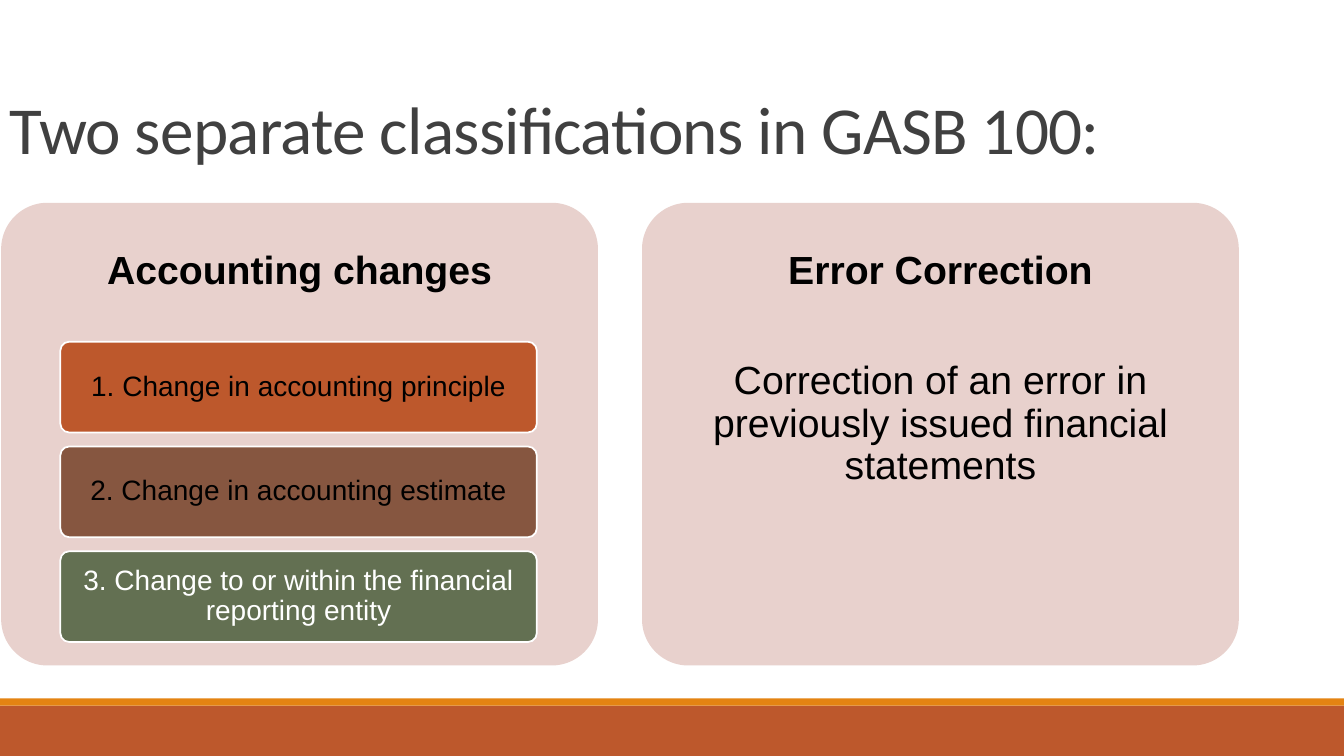
from pptx import Presentation
from pptx.dml.color import RGBColor
from pptx.enum.shapes import MSO_SHAPE
from pptx.enum.text import MSO_ANCHOR, PP_ALIGN
from pptx.util import Cm, Pt

WHITE = RGBColor(0xFF, 0xFF, 0xFF)
BLACK = RGBColor(0x00, 0x00, 0x00)
GRAY = RGBColor(0x40, 0x40, 0x40)
RUST = RGBColor(0xBD, 0x58, 0x2C)
ORANGE = RGBColor(0xE4, 0x83, 0x12)
BROWN = RGBColor(0x86, 0x56, 0x40)
GREEN = RGBColor(0x63, 0x70, 0x52)
PINK = RGBColor(0xE8, 0xD1, 0xCD)

# Text formats
TITLE = {"name": "Calibri", "size": Pt(48)}
HEAD = {"name": "Arial", "size": Pt(28), "bold": True}
BODY = {"name": "Arial", "size": Pt(28), "bold": False}
ITEM = {"name": "Arial", "size": Pt(20)}

# Panel and item grid, in cm
PANEL_X, PANEL_Y, PANEL_W, PANEL_H = 0.03, 5.11, 15.04, 11.66
PANEL_STEP = 16.15
HEAD_H = 3.5
ITEM_X, ITEM_Y, ITEM_W, ITEM_H = 1.52, 8.61, 12.01, 2.29
ITEM_STEP = 2.64

ITEMS = [
    ("1. Change in accounting principle", RUST, BLACK),
    ("2. Change in accounting estimate", BROWN, BLACK),
    ("3. Change to or within the financial reporting entity", GREEN, WHITE),
]


def write(shape, text, style, color, pad=0.3, align=PP_ALIGN.CENTER,
          anchor=MSO_ANCHOR.MIDDLE, lead=0.9):
    frame = shape.text_frame
    layout = {"word_wrap": True, "vertical_anchor": anchor,
              "margin_left": Cm(pad), "margin_right": Cm(pad),
              "margin_top": Cm(pad / 2), "margin_bottom": Cm(pad / 2)}
    for key, value in layout.items():
        setattr(frame, key, value)
    para = frame.paragraphs[0]
    para.alignment, para.line_spacing = align, lead
    run = para.add_run()
    run.text = text
    for key, value in style.items():
        setattr(run.font, key, value)
    run.font.color.rgb = color
    return run


def add_box(slide, kind, x, y, w, h, fill, line=None):
    box = slide.shapes.add_shape(kind, Cm(x), Cm(y), Cm(w), Cm(h))
    box.shadow.inherit = False
    box.fill.solid()
    box.fill.fore_color.rgb = fill
    if line is None:
        box.line.fill.background()
    else:
        box.line.color.rgb = line
        box.line.width = Pt(1.25)
    if kind == MSO_SHAPE.ROUNDED_RECTANGLE:
        box.adjustments[0] = 0.1
    return box


def add_text(slide, x, y, w, h, text, style, color, **opts):
    box = slide.shapes.add_textbox(Cm(x), Cm(y), Cm(w), Cm(h))
    return write(box, text, style, color, **opts)


def add_panel(slide, x, head):
    add_box(slide, MSO_SHAPE.ROUNDED_RECTANGLE,
            x, PANEL_Y, PANEL_W, PANEL_H, PINK)
    add_text(slide, x, PANEL_Y, PANEL_W, HEAD_H, head, HEAD, BLACK)


def main():
    deck = Presentation()
    deck.slide_width, deck.slide_height = Cm(33.87), Cm(19.05)
    slide = deck.slides.add_slide(deck.slide_layouts[6])

    # Footer bars
    add_box(slide, MSO_SHAPE.RECTANGLE, 0, 17.78, 33.87, 1.27, RUST)
    add_box(slide, MSO_SHAPE.RECTANGLE, 0, 17.6, 33.87, 0.18, ORANGE)

    # Title
    title = add_text(slide, 0, 0, 31.22, 4.37,
                     "Two separate classifications in GASB 100:", TITLE, GRAY,
                     pad=0.25, align=PP_ALIGN.LEFT,
                     anchor=MSO_ANCHOR.BOTTOM, lead=0.85)
    title.font._element.set("spc", "-50")

    # Left panel with its items
    add_panel(slide, PANEL_X, "Accounting changes")
    for i, (text, fill, color) in enumerate(ITEMS):
        item = add_box(slide, MSO_SHAPE.ROUNDED_RECTANGLE, ITEM_X,
                       ITEM_Y + i * ITEM_STEP, ITEM_W, ITEM_H, fill, WHITE)
        write(item, text, ITEM, color, pad=0.2)

    # Right panel with its statement
    right = PANEL_X + PANEL_STEP
    add_panel(slide, right, "Error Correction")
    add_text(slide, right, 8.61, PANEL_W, 4.17,
             "Correction of an error in previously issued financial statements",
             BODY, BLACK)

    deck.save("out.pptx")


if __name__ == "__main__":
    main()
